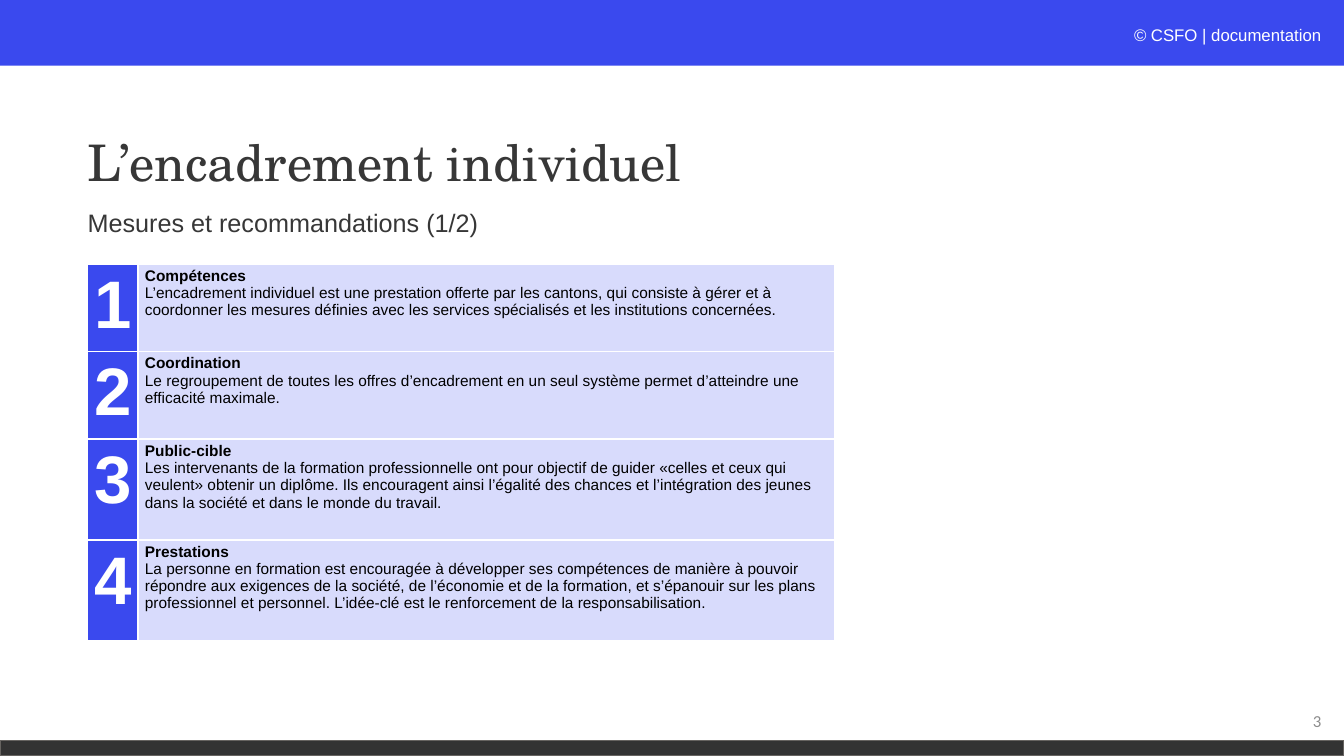
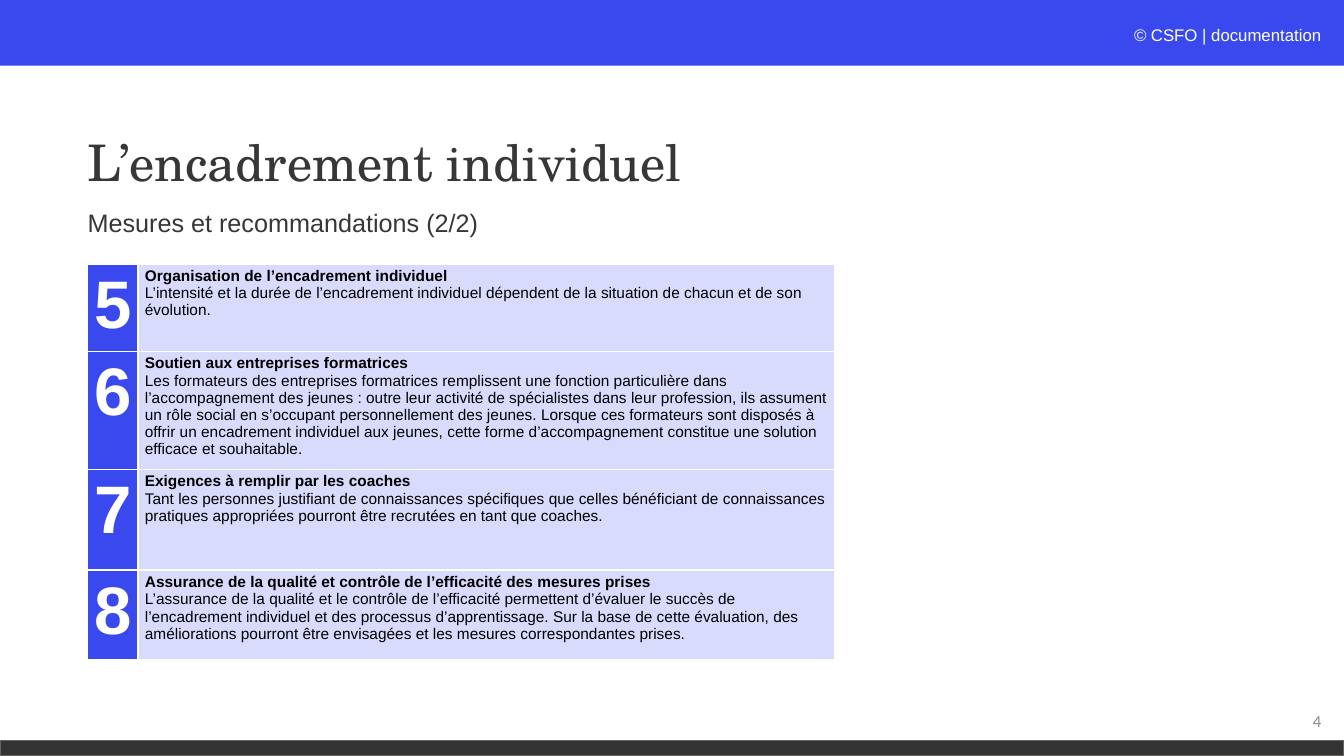
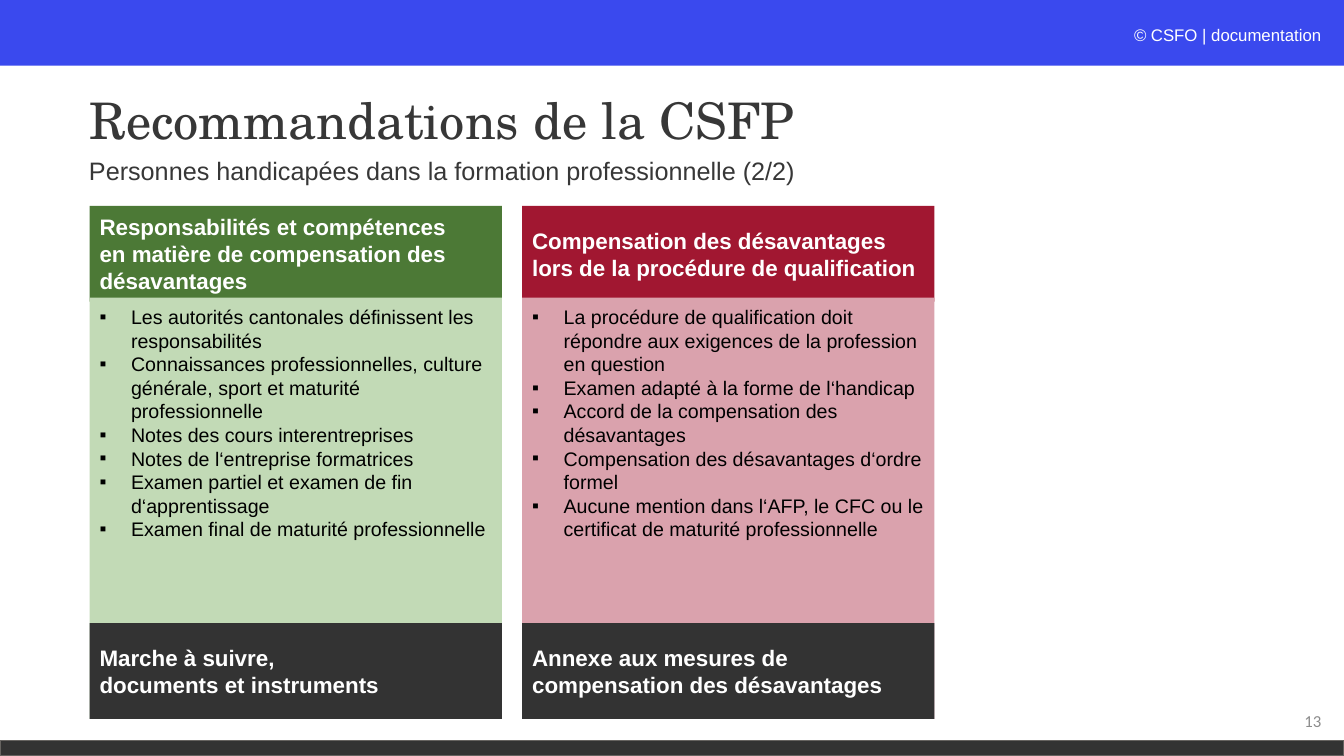
from pptx import Presentation
from pptx.dml.color import RGBColor
from pptx.enum.shapes import MSO_SHAPE
from pptx.enum.text import MSO_ANCHOR, MSO_AUTO_SIZE, PP_ALIGN
from pptx.oxml.ns import qn
from pptx.util import Pt
from lxml import etree

RECT = MSO_SHAPE.RECTANGLE
MID, TOP = MSO_ANCHOR.MIDDLE, MSO_ANCHOR.TOP
LEFT, MIDST, RIGHT = PP_ALIGN.LEFT, PP_ALIGN.CENTER, PP_ALIGN.RIGHT
FIXED = MSO_AUTO_SIZE.NONE

WIDE, HIGH = 960, 540
BLUE, PALE, DARK, EDGE = "3A49EE", "D8DBFC", "333333", "666360"
WHITE, BLACK, INK, GREY = "FFFFFF", "000000", "373737", "8C8C8C"
SANS, SERIF, PLAIN = "Arial", "TeX Gyre Schola", "Calibri"

ROWS_ONE = [
    ("1", 58.5, "Compétences",
     "L’encadrement individuel est une prestation offerte par les cantons, qui consiste à gérer et à "
     "coordonner les mesures définies avec les services spécialisés et les institutions concernées."),
    ("2", 58.5, "Coordination",
     "Le regroupement de toutes les offres d’encadrement en un seul système permet d’atteindre une "
     "efficacité maximale."),
    ("3", 72, "Public-cible",
     "Les intervenants de la formation professionnelle ont pour objectif de guider «celles et ceux qui "
     "veulent» obtenir un diplôme. Ils encouragent ainsi l’égalité des chances et l’intégration des jeunes "
     "dans la société et dans le monde du travail."),
    ("4", 72, "Prestations",
     "La personne en formation est encouragée à développer ses compétences de manière à pouvoir "
     "répondre aux exigences de la société, de l’économie et de la formation, et s’épanouir sur les plans "
     "professionnel et personnel. L’idée-clé est le renforcement de la responsabilisation."),
]
ROWS_TWO = [
    ("5", 58.5, "Organisation de l’encadrement individuel",
     "L’intensité et la durée de l’encadrement individuel dépendent de la situation de chacun et de son "
     "évolution."),
    ("6", 78.5, "Soutien aux entreprises formatrices",
     "Les formateurs des entreprises formatrices remplissent une fonction particulière dans "
     "l’accompagnement des jeunes : outre leur activité de spécialistes dans leur profession, ils assument "
     "un rôle social en s’occupant personnellement des jeunes. Lorsque ces formateurs sont disposés à "
     "offrir un encadrement individuel aux jeunes, cette forme d’accompagnement constitue une solution "
     "efficace et souhaitable."),
    ("7", 72, "Exigences à remplir par les coaches",
     "Tant les personnes justifiant de connaissances spécifiques que celles bénéficiant de connaissances "
     "pratiques appropriées pourront être recrutées en tant que coaches."),
    ("8", 64, "Assurance de la qualité et contrôle de l’efficacité des mesures prises",
     "L’assurance de la qualité et le contrôle de l’efficacité permettent d’évaluer le succès de "
     "l’encadrement individuel et des processus d’apprentissage. Sur la base de cette évaluation, des "
     "améliorations pourront être envisagées et les mesures correspondantes prises."),
]
PANELS = [
    ("4C7936", "C2DAB6",
     ["Responsabilités et compétences", "en matière de compensation des", "désavantages"],
     ["Les autorités cantonales définissent les responsabilités",
      "Connaissances professionnelles, culture générale, sport et maturité professionnelle",
      "Notes des cours interentreprises",
      "Notes de l‘entreprise formatrices",
      "Examen partiel et examen de fin d‘apprentissage",
      "Examen final de maturité professionnelle"],
     ["Marche à suivre,", "documents et instruments"]),
    ("A11731", "DAA2AD",
     ["Compensation des désavantages", "lors de la procédure de qualification"],
     ["La procédure de qualification doit répondre aux exigences de la profession en question",
      "Examen adapté à la forme de l‘handicap",
      "Accord de la compensation des désavantages",
      "Compensation des désavantages d‘ordre formel",
      "Aucune mention dans l‘AFP, le CFC ou le certificat de maturité professionnelle"],
     ["Annexe aux mesures de", "compensation des désavantages"]),
]


def tone(code):
    return RGBColor.from_string(code)


def paint(item, code):
    item.fill.solid()
    item.fill.fore_color.rgb = tone(code)


def write(frame, paras, size=12, face=SANS, tint=BLACK, bold=False, align=LEFT,
          anchor=None, space=None, mark=None):
    frame.word_wrap = True
    if anchor is not None:
        frame.vertical_anchor = anchor
    for n, para in enumerate(paras):
        line = frame.paragraphs[0] if n == 0 else frame.add_paragraph()
        line.alignment = align
        if space:
            line.line_spacing = space
        if mark:
            props = line._p.get_or_add_pPr()
            props.set("marL", str(Pt(22.5)))
            props.set("indent", str(-Pt(22.5)))
            etree.SubElement(props, qn("a:buFont")).set("typeface", SANS)
            etree.SubElement(props, qn("a:buChar")).set("char", mark)
        for part, extra in [(para, {})] if isinstance(para, str) else para:
            run = line.add_run()
            run.text = part
            font = run.font
            font.size, font.name = Pt(size), face
            font.bold = extra.get("bold", bold)
            font.italic = extra.get("italic", False)
            font.color.rgb = tone(extra.get("tint", tint))


def block(slide, x, y, w, h, fill, edge=None):
    shape = slide.shapes.add_shape(RECT, Pt(x), Pt(y), Pt(w), Pt(h))
    shape.shadow.inherit = False
    paint(shape, fill)
    if edge:
        shape.line.color.rgb = tone(edge)
        shape.line.width = Pt(1)
    else:
        shape.line.fill.background()
    return shape


def label(slide, x, y, w, h, paras, **form):
    box = slide.shapes.add_textbox(Pt(x), Pt(y), Pt(w), Pt(h))
    write(box.text_frame, paras, **form)


def start(deck, title, sub, page, x, y, w, drop):
    slide = deck.slides.add_slide(deck.slide_layouts[5])
    block(slide, 0, 0, WIDE, 47, BLUE)
    block(slide, 0, 529, WIDE, 11, DARK, edge=EDGE)
    credit = [("© ", {"italic": True, "tint": "FCFDFE"}), ("CSFO | documentation", {})]
    label(slide, 620.5, 14, 330.5, 22, [credit], tint=WHITE, align=RIGHT)
    head = slide.shapes.title
    head.left, head.top, head.width, head.height = Pt(x), Pt(y), Pt(w), Pt(104.5)
    head.text_frame.auto_size = FIXED
    write(head.text_frame, [title], size=36, face=SERIF, tint=INK, anchor=MID, space=0.9)
    label(slide, x, y + drop, 634.5, 39, [sub], size=18, tint=INK, space=0.9)
    label(slide, 735, 500.5, 216, 29, [page], face=PLAIN, tint=GREY, align=RIGHT, anchor=MID)
    return slide


def frame_cell(cell):
    props = cell._tc.get_or_add_tcPr()
    for n, side in enumerate(("lnL", "lnR", "lnT", "lnB")):
        line = etree.Element(qn("a:" + side), w=str(Pt(1.5)))
        fill = etree.SubElement(line, qn("a:solidFill"))
        etree.SubElement(fill, qn("a:srgbClr")).set("val", WHITE)
        props.insert(n, line)


def grid(slide, x, y, w, rows):
    high = sum(row[1] for row in rows)
    table = slide.shapes.add_table(len(rows), 2, Pt(x), Pt(y), Pt(w), Pt(high)).table
    table.first_row = table.horz_banding = False
    table.columns[0].width, table.columns[1].width = Pt(36), Pt(w - 36)
    for n, (num, tall, head, body) in enumerate(rows):
        table.rows[n].height = Pt(tall)
        left, right = table.cell(n, 0), table.cell(n, 1)
        for cell, fill in ((left, BLUE), (right, PALE)):
            cell.margin_left = cell.margin_right = Pt(5)
            cell.margin_top = cell.margin_bottom = Pt(2.5)
            paint(cell, fill)
            frame_cell(cell)
        write(left.text_frame, [num], size=48, tint=WHITE, bold=True, align=MIDST)
        write(right.text_frame, [[(head, {"bold": True})], body], size=11)


def panel(slide, x, y, w, h, deep, soft, head, items, foot):
    cap = 68.5
    strong = {"size": 16, "tint": WHITE, "bold": True, "anchor": MID}
    write(block(slide, x, y, w, cap, deep).text_frame, head, **strong)
    body = block(slide, x, y + 65.5, w, h - 65.5, soft).text_frame
    body.margin_top = Pt(5.5)
    write(body, items, size=14, anchor=TOP, mark="▪")
    write(block(slide, x, y + h - cap, w, cap, DARK).text_frame, foot, **strong)


def measures(deck, sub, page, rows):
    slide = start(deck, "L’encadrement individuel", sub, page, 55.5, 65.5, 635, 81.5)
    grid(slide, 62.5, 188.5, 534, rows)


def advice(deck):
    slide = start(deck, "Recommandations de la CSFP",
                  "Personnes handicapées dans la formation professionnelle (2/2)",
                  "13", 56.5, 36, 763, 74)
    wide, gap = 294.5, 14.5
    for n, parts in enumerate(PANELS):
        panel(slide, 64 + n * (wide + gap), 147, wide, 366.5, *parts)


def main():
    deck = Presentation()
    deck.slide_width, deck.slide_height = Pt(WIDE), Pt(HIGH)
    measures(deck, "Mesures et recommandations (1/2)", "3", ROWS_ONE)
    measures(deck, "Mesures et recommandations (2/2)", "4", ROWS_TWO)
    advice(deck)
    deck.save("out.pptx")


if __name__ == "__main__":
    main()
